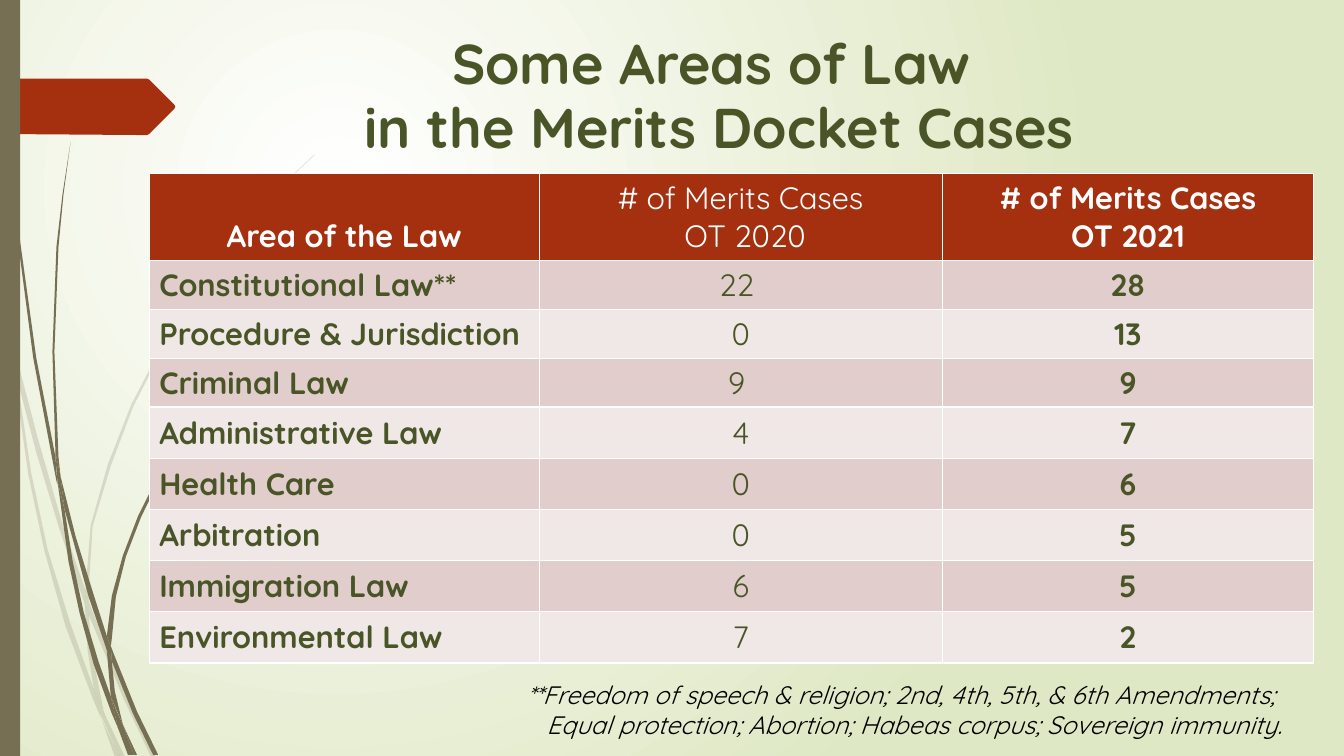
import lxml.etree
import pptx
import pptx.dml.color
import pptx.enum.shapes
import pptx.enum.text
import pptx.oxml.ns
import pptx.util

Cm = pptx.util.Cm
Pt = pptx.util.Pt
RGBColor = pptx.dml.color.RGBColor
ALIGN = pptx.enum.text.PP_ALIGN
ANCHOR = pptx.enum.text.MSO_ANCHOR
qn = pptx.oxml.ns.qn

WHITE = RGBColor(0xFF, 0xFF, 0xFF)
BLACK = RGBColor(0, 0, 0)
PALE_GREEN = RGBColor(0xDF, 0xE8, 0xC4)
TAUPE = RGBColor(0x76, 0x6F, 0x54)
RUST = RGBColor(0xA5, 0x30, 0x10)
OLIVE = RGBColor(0x49, 0x55, 0x26)
ROSE = RGBColor(0xE1, 0xCD, 0xCC)
LIGHT_ROSE = RGBColor(0xF0, 0xE8, 0xE7)
FONT = "Quicksand"
GRID = Cm(2.54) / 100


def paint(shape, color, opacity=100):
    shape.shadow.inherit = False
    shape.fill.solid()
    shape.fill.fore_color.rgb = color
    shape.line.fill.background()
    if opacity < 100:
        rgb = shape._element.spPr.find(qn("a:solidFill"))[0]
        lxml.etree.SubElement(rgb, qn("a:alpha")).set("val", str(opacity * 1000))


def style(paragraph, size, color, align, bold=False, italic=False):
    paragraph.alignment = align
    paragraph.font.name = FONT
    paragraph.font.size = Pt(size)
    paragraph.font.color.rgb = color
    paragraph.font.bold = bold
    paragraph.font.italic = italic


prs = pptx.Presentation()
prs.slide_width = Cm(33.87)
prs.slide_height = Cm(19.05)
slide = prs.slides.add_slide(prs.slide_layouts[5])

backdrop = slide.background.fill
backdrop.gradient()
for stop, color in zip(backdrop.gradient_stops, (WHITE, PALE_GREEN)):
    stop.color.rgb = color
gradient = slide.element.find(".//" + qn("a:gradFill"))
gradient.remove(gradient.find(qn("a:lin")))
glow = lxml.etree.SubElement(gradient, qn("a:path"), path="circle")
lxml.etree.SubElement(glow, qn("a:fillToRect"), l="50000", t="50000", r="100000", b="100000")

faint_grass = [
    [(11, 350), (9, 322), (0, 282), (0, 299), (10, 344)],
    [(58, 522), (84, 599), (85, 586), (62, 520), (37, 433), (14, 345), (17, 376), (36, 449)],
    [(92, 607), (88, 596), (88, 610), (123, 694), (150, 751), (155, 751), (127, 692)],
    [(119, 751), (124, 751), (105, 711)],
    [(93, 683), (70, 619), (47, 544), (31, 469), (17, 376), (11, 350), (28, 470),
     (44, 546), (65, 621), (92, 693), (101, 714), (99, 707)],
    [(84, 599), (87, 646), (93, 683), (96, 692), (105, 711), (103, 706), (91, 646), (88, 608)],
    [(88, 584), (92, 522), (110, 462), (132, 404), (160, 349), (193, 295), (229, 245),
     (268, 198), (290, 175), (312, 154), (312, 153), (289, 175), (268, 197), (228, 244),
     (191, 293), (158, 348), (130, 402), (107, 461), (90, 521), (85, 584), (85, 586), (88, 596)],
    [(101, 714), (114, 751), (119, 751)],
    [(88, 608), (88, 596), (85, 586), (84, 599)],
    [(96, 692), (93, 683), (99, 707), (119, 751), (105, 711)],
]
dark_grass = [
    [(7, 110), (17, 233), (33, 355), (56, 477), (57, 481), (55, 453), (36, 355),
     (19, 232), (8, 109), (5, 48), (4, 0), (3, 0), (4, 48)],
    [(88, 592), (106, 645), (106, 631), (93, 590), (75, 532), (60, 472), (64, 505)],
    [(113, 649), (110, 641), (111, 656), (132, 708), (152, 749), (157, 749), (136, 706)],
    [(110, 691), (98, 657), (83, 607), (72, 556), (64, 505), (57, 477), (68, 557),
     (79, 608), (93, 659), (111, 708), (117, 722), (116, 717)],
    [(60, 472), (58, 453), (54, 349), (58, 245), (63, 193), (70, 141), (62, 193),
     (56, 245), (52, 349), (55, 449)],
    [(133, 749), (136, 749), (122, 719)],
    [(57, 477), (64, 505), (60, 472), (55, 449), (55, 453)],
    [(111, 633), (115, 592), (125, 552), (140, 513), (158, 476), (180, 440), (205, 406),
     (231, 374), (261, 344), (260, 344), (231, 373), (204, 405), (178, 439), (156, 474),
     (137, 512), (122, 551), (111, 591), (106, 631), (110, 641)],
    [(117, 722), (127, 749), (131, 749)],
    [(106, 645), (110, 691), (122, 719), (114, 686), (111, 656)],
    [(106, 645), (111, 656), (110, 641), (106, 631)],
    [(116, 706), (110, 691), (117, 722), (130, 749), (133, 749), (122, 719)],
]
page_arrow = [(0, 78), (146, 78), (148, 79), (173, 104), (174, 106), (173, 108),
              (148, 133), (146, 134), (136, 134), (0, 133)]

outlines = [(blade, TAUPE, 20) for blade in faint_grass]
outlines += [(blade, TAUPE, 100) for blade in dark_grass]
outlines.append((page_arrow, RUST, 100))
for points, color, opacity in outlines:
    builder = slide.shapes.build_freeform(*points[0], scale=GRID)
    builder.add_line_segments(points[1:], close=True)
    paint(builder.convert_to_shape(), color, opacity)

side_bar = slide.shapes.add_shape(
    pptx.enum.shapes.MSO_SHAPE.RECTANGLE, 0, 0, Cm(0.51), prs.slide_height)
paint(side_bar, TAUPE)

title = slide.shapes.title
title.left, title.top, title.width, title.height = Cm(5.74), Cm(0.53), Cm(24.77), Cm(3.84)
heading = title.text_frame
heading.text = "Some Areas of Law \vin the Merits Docket Cases"
heading.auto_size = pptx.enum.text.MSO_AUTO_SIZE.NONE
heading.vertical_anchor = ANCHOR.MIDDLE
style(heading.paragraphs[0], 40, OLIVE, ALIGN.CENTER, bold=True)
heading.paragraphs[0].line_spacing = 0.96

cases = [
    ("Area of the Law", "# of Merits Cases\n OT 2020", "# of Merits Cases\nOT 2021"),
    ("Constitutional Law**", "22 ", "28"),
    ("Procedure & Jurisdiction", "0", "13"),
    ("Criminal Law", "9 ", "9"),
    ("Administrative Law", "4", "7"),
    ("Health Care", "0", "6"),
    ("Arbitration", "0", "5"),
    ("Immigration Law", "6", "5"),
    ("Environmental Law", "7", "2"),
]
docket = slide.shapes.add_table(
    len(cases), 3, Cm(3.76), Cm(4.37), Cm(29.34), Cm(12.24)).table
for column, width in zip(docket.columns, (9.83, 10.16, 9.35)):
    column.width = Cm(width)
for row, height in zip(docket.rows, [2.13] + [1.23] * 3 + [1.29] * 5):
    row.height = Cm(height)
for r, texts in enumerate(cases):
    for c, text in enumerate(texts):
        cell = docket.cell(r, c)
        cell.text = text
        cell.vertical_anchor = ANCHOR.MIDDLE if r else ANCHOR.BOTTOM
        cell.fill.solid()
        cell.fill.fore_color.rgb = (LIGHT_ROSE, ROSE)[r % 2] if r else RUST
        for paragraph in cell.text_frame.paragraphs:
            style(paragraph, 22, OLIVE if r else WHITE,
                  ALIGN.LEFT if r and c == 0 else ALIGN.CENTER, bold=c != 1)

footnote = slide.shapes.add_textbox(Cm(11.53), Cm(16.99), Cm(21.03), Cm(1.8)).text_frame
footnote.word_wrap = True
footnote.text = ("**Freedom of speech & religion; 2nd, 4th, 5th, & 6th Amendments; \v"
                 "Equal protection; Abortion; Habeas corpus; Sovereign immunity.")
style(footnote.paragraphs[0], 18, BLACK, ALIGN.RIGHT, italic=True)

prs.save("out.pptx")
